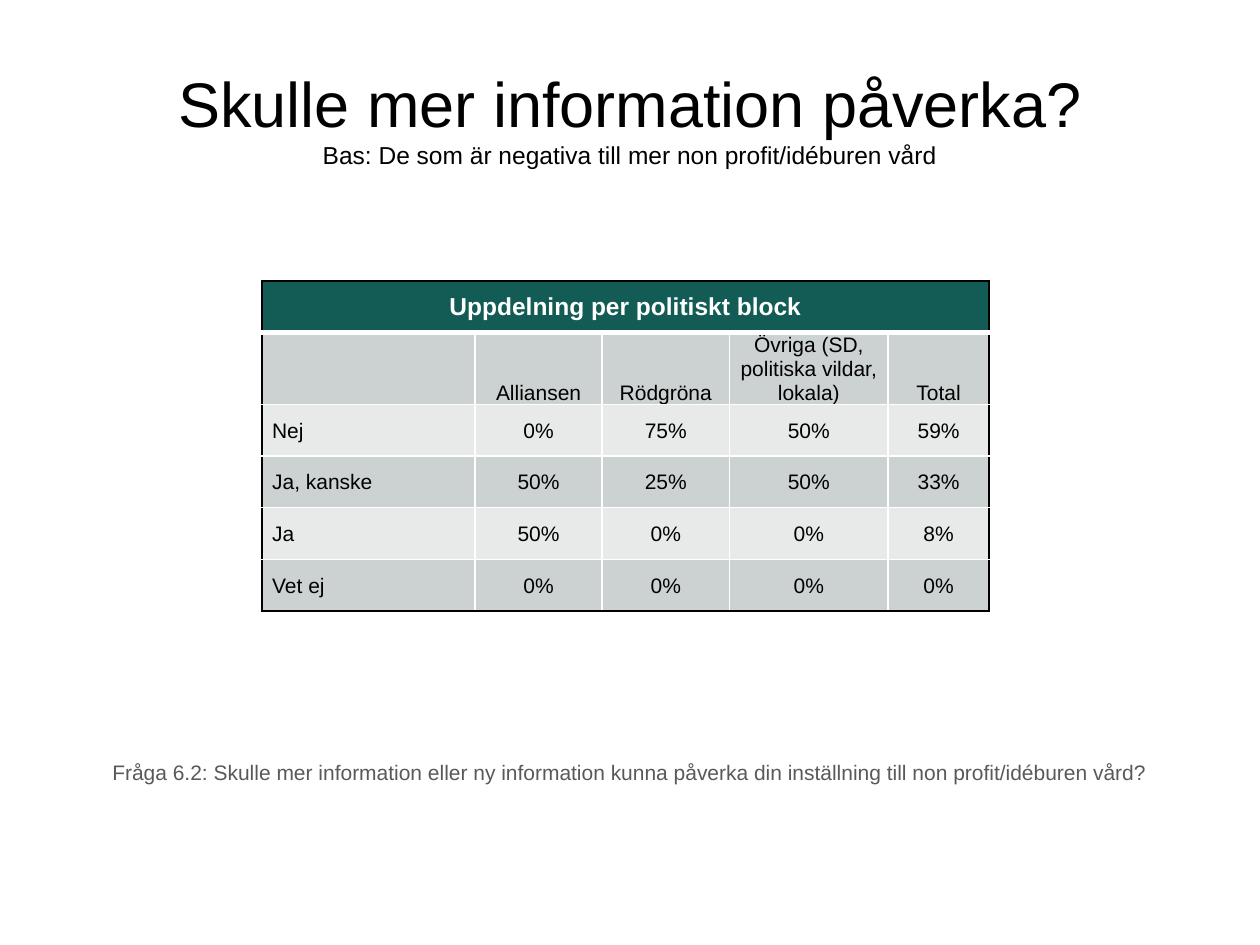
"""Build a slide with a survey table split by political block."""
from dataclasses import dataclass

import lxml.etree
import pptx
import pptx.dml.color
import pptx.enum.text
import pptx.oxml.ns
import pptx.util

Inches = pptx.util.Inches
Anchor = pptx.enum.text.MSO_ANCHOR
Align = pptx.enum.text.PP_ALIGN

BLACK, WHITE, GREY = "000000", "FFFFFF", "595959"
HEADING_FILL = "135C55"
BAND_FILLS = ("E7EAE9", "CCD2D1")
COLUMN_WIDTHS = (1.69, 1.01, 1.01, 1.26, 0.8)
ROW_HEIGHT = 0.41
HEADING = "Uppdelning per politiskt block"
ROWS = (
    ("", "Alliansen", "Rödgröna", "Övriga (SD, politiska vildar, lokala)", "Total"),
    ("Nej", "0%", "75%", "50%", "59%"),
    ("Ja, kanske", "50%", "25%", "50%", "33%"),
    ("Ja", "50%", "0%", "0%", "8%"),
    ("Vet ej", "0%", "0%", "0%", "0%"),
)


@dataclass
class Caption:
    text: str
    top: float
    height: float
    sizes: tuple[int, ...]
    color: str
    anchor: Anchor


@dataclass
class Border:
    side: str
    color: str
    width: float = 1


CAPTIONS = (
    Caption("Fråga 6.2: Skulle mer information eller ny information kunna påverka "
            "din inställning till non profit/idéburen vård?",
            5.98, 0.3, (12,), GREY, Anchor.TOP),
    Caption("Skulle mer information påverka?\v"
            "Bas: De som är negativa till mer non profit/idéburen vård",
            0.3, 1.25, (36, 14), BLACK, Anchor.MIDDLE),
)


def rgb(value: str) -> pptx.dml.color.RGBColor:
    return pptx.dml.color.RGBColor.from_string(value)


def style_run(run, size: int, color: str, bold: bool = False) -> None:
    run.font.name = "Arial"
    run.font.size = pptx.util.Pt(size)
    run.font.bold = bold
    run.font.color.rgb = rgb(color)


def add_caption(slide, caption: Caption) -> None:
    box = slide.shapes.add_textbox(0, Inches(caption.top), Inches(10), Inches(caption.height))
    frame = box.text_frame
    frame.word_wrap = True
    frame.vertical_anchor = caption.anchor
    paragraph = frame.paragraphs[0]
    paragraph.text = caption.text
    paragraph.alignment = Align.CENTER
    for run, size in zip(paragraph.runs, caption.sizes):
        style_run(run, size, caption.color)


def add_border(cell, border: Border) -> None:
    qn = pptx.oxml.ns.qn
    line = lxml.etree.SubElement(cell._tc.get_or_add_tcPr(), qn(f"a:ln{border.side}"),
                                 w=str(pptx.util.Pt(border.width)))
    fill = lxml.etree.SubElement(line, qn("a:solidFill"))
    lxml.etree.SubElement(fill, qn("a:srgbClr"), val=border.color)


def cell_borders(row: int, column: int) -> tuple[Border, ...]:
    last_row, last_column = len(ROWS), len(COLUMN_WIDTHS) - 1
    heading = row == 0
    return (
        Border("L", BLACK if column == 0 else WHITE),
        Border("R", BLACK if column == last_column or heading else WHITE),
        Border("T", BLACK if heading else WHITE),
        Border("B", BLACK if row == last_row else WHITE, 3 if heading else 1),
    )


def format_cell(cell, row: int, column: int) -> None:
    heading = row == 0
    for border in cell_borders(row, column):
        add_border(cell, border)
    cell.fill.solid()
    cell.fill.fore_color.rgb = rgb(HEADING_FILL if heading else BAND_FILLS[row % 2])
    cell.vertical_anchor = Anchor.BOTTOM if row == 1 else Anchor.MIDDLE
    if not heading:
        cell.margin_left = Inches(0.08 if column == 0 else 0.01)
        cell.margin_top = cell.margin_right = Inches(0.01)
        cell.margin_bottom = 0
    paragraph = cell.text_frame.paragraphs[0]
    paragraph.alignment = Align.CENTER if heading or column else Align.LEFT
    for run in paragraph.runs:
        style_run(run, 14 if heading else 12, WHITE if heading else BLACK, heading)


def add_survey_table(slide) -> None:
    row_count, column_count = len(ROWS) + 1, len(COLUMN_WIDTHS)
    table = slide.shapes.add_table(
        row_count, column_count, Inches(2.08), Inches(2.23),
        Inches(sum(COLUMN_WIDTHS)), Inches(ROW_HEIGHT * row_count)).table
    for column, width in zip(table.columns, COLUMN_WIDTHS):
        column.width = Inches(width)
    for row in table.rows:
        row.height = Inches(ROW_HEIGHT)
    table.cell(0, 0).merge(table.cell(0, column_count - 1))
    table.cell(0, 0).text_frame.text = HEADING
    for row, values in enumerate(ROWS, start=1):
        for column, value in enumerate(values):
            table.cell(row, column).text_frame.text = value
    for row in range(row_count):
        for column in range(column_count):
            format_cell(table.cell(row, column), row, column)


def main() -> None:
    presentation = pptx.Presentation()
    presentation.slide_width = Inches(10)
    presentation.slide_height = Inches(7.5)
    slide = presentation.slides.add_slide(presentation.slide_layouts[6])
    add_survey_table(slide)
    for caption in CAPTIONS:
        add_caption(slide, caption)
    presentation.save("out.pptx")


if __name__ == "__main__":
    main()
